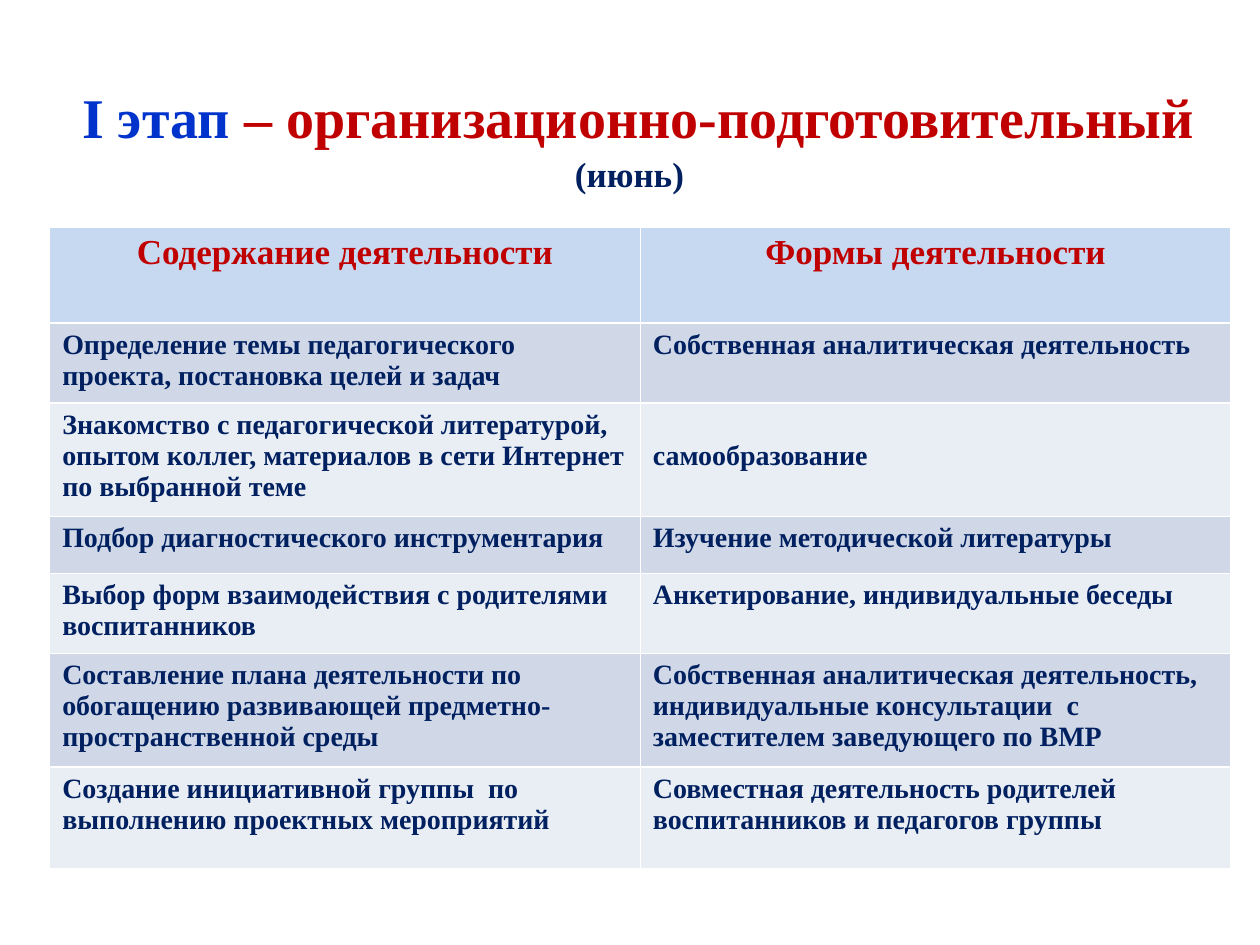
from pptx import Presentation
from pptx.dml.color import RGBColor as Color
from pptx.enum.text import MSO_ANCHOR as Anchor, PP_ALIGN as Align
from pptx.util import Pt

COLORS = {
    "red": "C00000",
    "blue": "0033CC",
    "navy": "002060",
    "header": "C6D9F1",
    "odd": "D0D8E8",
    "even": "E9EDF4",
}
SERIF, COMIC = "Times New Roman", "Comic Neue"

TITLE = [
    [(" ", 28, "red", COMIC), ("I этап ", 32, "blue", SERIF),
     ("– организационно-подготовительный", 32, "red", SERIF)],
    [("(июнь)", 20, "navy", SERIF)],
]
HEADINGS = ("Содержание деятельности", "Формы деятельности")
STEPS = [
    ("Определение темы педагогического проекта, постановка целей и задач",
     "Собственная аналитическая деятельность"),
    ("Знакомство с педагогической литературой,  опытом коллег, материалов в сети Интернет по выбранной теме",
     "самообразование"),
    ("Подбор диагностического инструментария",
     "Изучение методической литературы"),
    ("Выбор форм взаимодействия с родителями воспитанников",
     "Анкетирование, индивидуальные беседы"),
    ("Составление плана деятельности по обогащению развивающей предметно-пространственной среды",
     "Собственная аналитическая деятельность,  индивидуальные консультации  с заместителем заведующего по ВМР"),
    ("Создание инициативной группы  по выполнению проектных мероприятий",
     "Совместная деятельность родителей воспитанников и педагогов группы"),
]
ROW_HEIGHTS = [55, 45.7, 64.8, 32.6, 45.7, 65, 57.8]


class SlideBuilder:
    def __init__(self, slide):
        self.slide = slide

    def style(self, span, size, color, font=SERIF):
        span.font.size = Pt(size)
        span.font.name = font
        span.font.bold = True
        span.font.color.rgb = Color.from_string(COLORS[color])

    def title(self, lines, left, top, width, height, inset, gap):
        box = self.slide.shapes.add_textbox(Pt(left), Pt(top), Pt(width), Pt(height))
        frame = box.text_frame
        frame.word_wrap = True
        frame.vertical_anchor = Anchor.TOP
        frame.margin_top = Pt(inset)
        for index, line in enumerate(lines):
            para = frame.add_paragraph() if index else frame.paragraphs[0]
            para.alignment = Align.CENTER
            para.space_before = Pt(gap if index else 0)
            for text, size, color, font in line:
                span = para.add_run()
                span.text = text
                self.style(span, size, color, font)

    def cell(self, cell, text, fill, size, color, align):
        cell.fill.solid()
        cell.fill.fore_color.rgb = Color.from_string(COLORS[fill])
        para = cell.text_frame.paragraphs[0]
        para.text = text
        para.alignment = align
        self.style(para.runs[0], size, color)

    def table(self, headings, rows, left, top, width, heights):
        frame = self.slide.shapes.add_table(
            len(heights), len(headings), Pt(left), Pt(top), Pt(width), Pt(sum(heights)))
        table = frame.table
        for row, height in zip(table.rows, heights):
            row.height = Pt(height)
        for column, heading in enumerate(headings):
            self.cell(table.cell(0, column), heading, "header", 20, "red", Align.CENTER)
        for index, texts in enumerate(rows, start=1):
            fill = "odd" if index % 2 else "even"
            for column, text in enumerate(texts):
                self.cell(table.cell(index, column), text, fill, 16, "navy", Align.LEFT)
        return table


def main():
    deck = Presentation()
    deck.slide_width, deck.slide_height = Pt(720), Pt(540)
    page = SlideBuilder(deck.slides.add_slide(deck.slide_layouts[6]))

    # Stage title, set low in its box
    page.title(TITLE, 16.5, 0, 686.5, 82.8, inset=47, gap=1.5)

    # Activities and their forms
    table = page.table(HEADINGS, STEPS, 28.4, 129.6, 675, ROW_HEIGHTS)
    # The short entry lines up with the second line of its neighbour
    table.cell(2, 1).margin_top = Pt(21.5)

    deck.save("out.pptx")


if __name__ == "__main__":
    main()
